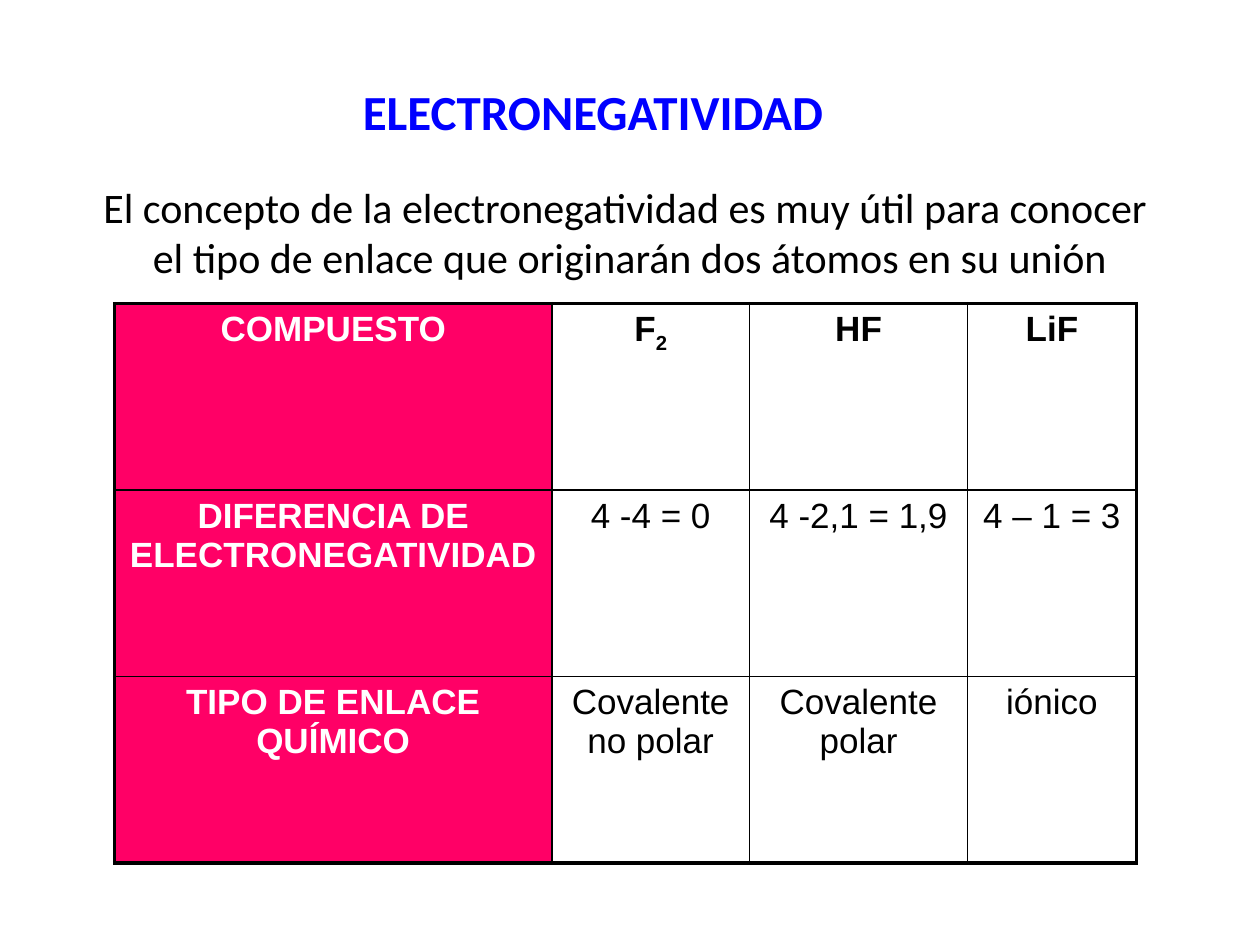
from lxml.etree import SubElement
from pptx import Presentation
from pptx.dml.color import RGBColor
from pptx.enum.text import MSO_AUTO_SIZE, PP_ALIGN
from pptx.oxml.ns import qn
from pptx.util import Inches, Pt

TITLE = ["ELECTRONEGATIVIDAD"]
INTRO = ["El concepto de la electronegatividad es muy útil para conocer ",
         "el tipo de enlace que originarán dos átomos en su unión"]
ROWS = [
    ["COMPUESTO", "F2", "HF", "LiF"],
    ["DIFERENCIA DE ELECTRONEGATIVIDAD", "4 -4 = 0", "4 -2,1 = 1,9", "4 – 1 = 3"],
    ["TIPO DE ENLACE QUÍMICO", "Covalente no polar", "Covalente polar", "iónico"],
]
SUBSCRIPTS = {"F2": ("F", "2")}
COL_WIDTHS = [3.47, 1.57, 1.73, 1.34]
ROW_HEIGHT = 1.48
BLACK, WHITE, BLUE, PINK = "000000", "FFFFFF", "0000FF", "FF0066"
OUTER, INNER = 2.25, 1


def rgb(color):
    return RGBColor.from_string(color)


def style(p, font, size, color, bold):
    p.alignment = PP_ALIGN.CENTER
    p.font.name, p.font.size, p.font.bold = font, Pt(size), bold
    p.font.color.rgb = rgb(color)


def add_text(s, lines, box, size, color, bold=False):
    tf = s.shapes.add_textbox(*map(Inches, box)).text_frame
    tf.word_wrap = False
    tf.auto_size = MSO_AUTO_SIZE.SHAPE_TO_FIT_TEXT
    for i, line in enumerate(lines):
        p = tf.add_paragraph() if i else tf.paragraphs[0]
        p.add_run().text = line
        style(p, "Calibri", size, color, bold)


def add_border(cell, side, width):
    ln = SubElement(cell._tc.get_or_add_tcPr(), qn("a:ln" + side), w=str(Pt(width)))
    fill = SubElement(ln, qn("a:solidFill"))
    SubElement(fill, qn("a:srgbClr"), val=BLACK)


def fill_cell(cell, text, row, col):
    last_row, last_col = len(ROWS) - 1, len(COL_WIDTHS) - 1
    edges = {"L": col == 0, "R": col == last_col, "T": row == 0, "B": row == last_row}
    for side, is_outer in edges.items():
        add_border(cell, side, OUTER if is_outer else INNER)
    cell.fill.solid()
    cell.fill.fore_color.rgb = rgb(WHITE if col else PINK)
    p = cell.text_frame.paragraphs[0]
    for i, part in enumerate(SUBSCRIPTS.get(text, (text,))):
        r = p.add_run()
        r.text = part
        if i:
            r._r.get_or_add_rPr().set("baseline", "-25000")
    style(p, "Arial", 20, BLACK if col else WHITE, row == 0 or col == 0)


def add_grid(s, left, top):
    size = Inches(sum(COL_WIDTHS)), Inches(ROW_HEIGHT * len(ROWS))
    table = s.shapes.add_table(len(ROWS), len(COL_WIDTHS),
                               Inches(left), Inches(top), *size).table
    table.first_row = table.horz_banding = False
    for column, width in zip(table.columns, COL_WIDTHS):
        column.width = Inches(width)
    for i, row in enumerate(ROWS):
        table.rows[i].height = Inches(ROW_HEIGHT)
        for j, text in enumerate(row):
            fill_cell(table.cell(i, j), text, i, j)


def main():
    prs = Presentation()
    prs.slide_width, prs.slide_height = Inches(10), Inches(7.5)
    s = prs.slides.add_slide(prs.slide_layouts[6])
    add_grid(s, 0.91, 2.41)
    add_text(s, TITLE, (2.76, 0.6, 3.89, 0.57), 28, BLUE, True)
    add_text(s, INTRO, (0.68, 1.39, 8.64, 0.91), 24, BLACK)
    prs.save("out.pptx")


if __name__ == "__main__":
    main()
